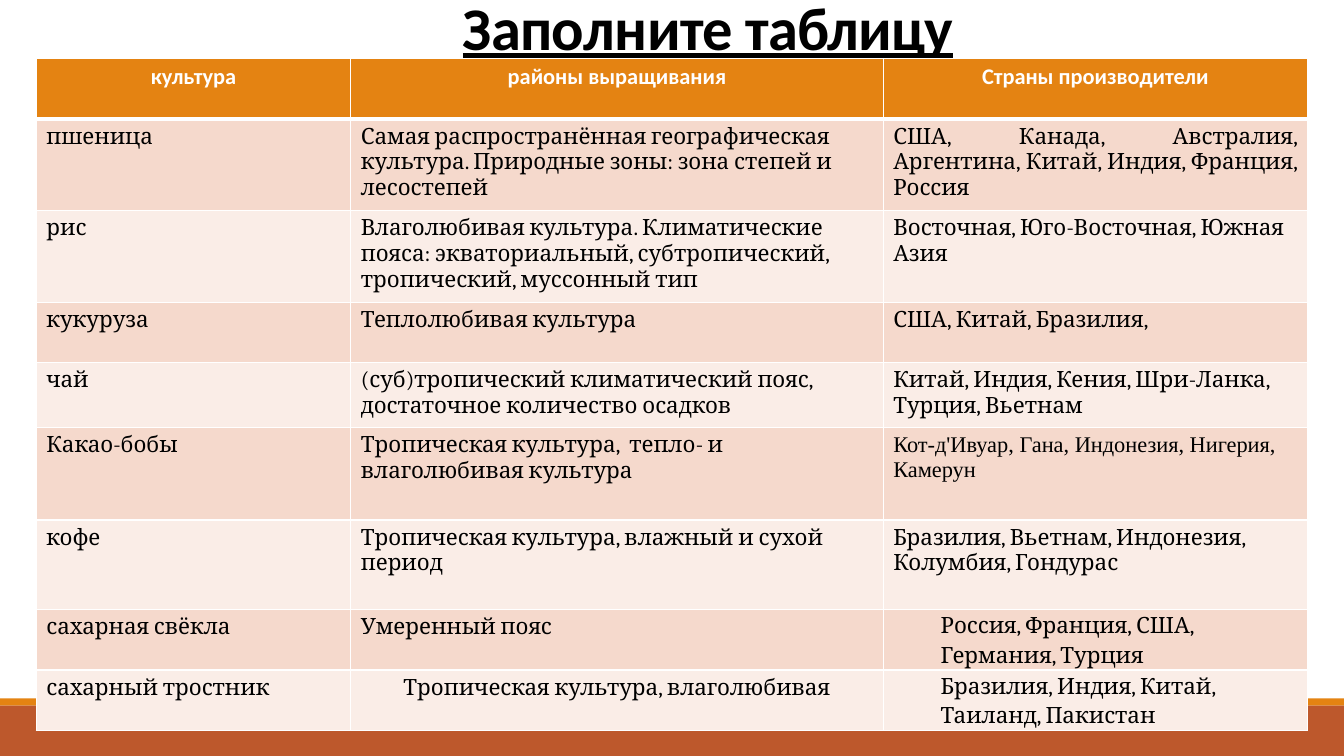
from lxml.etree import SubElement
from pptx import Presentation
from pptx.dml.color import RGBColor
from pptx.enum.shapes import MSO_SHAPE
from pptx.enum.text import MSO_ANCHOR, MSO_AUTO_SIZE, PP_ALIGN
from pptx.oxml.ns import qn
from pptx.util import Inches, Pt

WHITE = RGBColor(0xFF, 0xFF, 0xFF)
BLACK = RGBColor(0, 0, 0)
ORANGE = RGBColor(0xE4, 0x83, 0x12)
RUST = RGBColor(0xBD, 0x58, 0x2C)
PEACH = RGBColor(0xF5, 0xD9, 0xCC)
PALE = RGBColor(0xFA, 0xED, 0xE7)

SLIDE_WIDTH, SLIDE_HEIGHT = Inches(13.33), Inches(7.5)
COLUMN_WIDTHS = [3.12, 5.28, 4.21]
ROW_HEIGHTS = [0.6, 0.91, 0.91, 0.6, 0.64, 0.92, 0.89, 0.6, 0.6]
HEADINGS = ["культура", "районы выращивания", "Страны производители"]
CROPS = [
    ["пшеница",
     "Самая распространённая географическая культура. Природные зоны: зона степей и лесостепей",
     "США, Канада, Австралия, Аргентина, Китай, Индия, Франция, Россия"],
    ["рис",
     "Влаголюбивая культура. Климатические пояса: экваториальный, субтропический, "
     "тропический, муссонный тип",
     "Восточная, Юго-Восточная, Южная Азия"],
    ["кукуруза", "Теплолюбивая культура", "США, Китай, Бразилия,"],
    ["чай",
     "(суб)тропический климатический пояс, достаточное количество осадков",
     "Китай, Индия, Кения, Шри-Ланка, Турция, Вьетнам"],
    ["Какао-бобы",
     "Тропическая культура,  тепло- и влаголюбивая культура",
     "Кот-д'Ивуар, Гана, Индонезия, Нигерия, Камерун"],
    ["кофе",
     "Тропическая культура, влажный и сухой период",
     "Бразилия, Вьетнам, Индонезия, Колумбия, Гондурас"],
    ["сахарная свёкла", "Умеренный пояс", "Россия, Франция, США, Германия, Турция"],
    ["сахарный тростник",
     "Тропическая культура, влаголюбивая",
     "Бразилия, Индия, Китай, Таиланд, Пакистан"],
]


def add_footer(slide, left, top, width, height):
    """Draw the rust footer band with its orange strip on top."""
    strip_height = Inches(0.07)
    for band_top, band_height, color in [
        (top, strip_height, ORANGE),
        (top + strip_height, height - strip_height, RUST),
    ]:
        band = slide.shapes.add_shape(MSO_SHAPE.RECTANGLE, left, band_top, width, band_height)
        band.shadow.inherit = False
        band.fill.solid()
        band.fill.fore_color.rgb = color
        band.line.fill.background()


def place_title(slide, left, top, width, height):
    """Move the title placeholder into its box and format it."""
    title = slide.shapes.title
    title.left, title.top, title.width, title.height = left, top, width, height
    frame = title.text_frame
    frame.text = "Заполните таблицу"
    frame.auto_size = MSO_AUTO_SIZE.NONE
    frame.vertical_anchor = MSO_ANCHOR.BOTTOM
    heading = frame.paragraphs[0]
    heading.alignment = PP_ALIGN.CENTER
    heading.line_spacing = 0.85
    font = heading.font
    font.name, font.size, font.bold, font.underline = "Calibri", Pt(43.2), True, True
    font.color.rgb = BLACK
    heading.runs[0].font._element.set("spc", "-50")


def set_borders(cell, bottom_points):
    """Give a cell white borders, with its own bottom width."""
    properties = cell._tc.get_or_add_tcPr()
    for side, points in [("L", 1), ("R", 1), ("T", 1), ("B", bottom_points)]:
        border = SubElement(properties, qn(f"a:ln{side}"), w=str(Pt(points)))
        fill = SubElement(border, qn("a:solidFill"))
        SubElement(fill, qn("a:srgbClr"), val=str(WHITE))


def fill_cell(cell, text, background, color, face, bold):
    """Write one cell and return its paragraph."""
    set_borders(cell, 3 if bold else 1)
    cell.fill.solid()
    cell.fill.fore_color.rgb = background
    cell.text = text
    paragraph = cell.text_frame.paragraphs[0]
    font = paragraph.font
    font.name, font.size, font.bold = face, Pt(16), bold
    font.color.rgb = color
    return paragraph


def indent_countries(cell):
    """Indent the country list of a sugar crop."""
    cell.margin_left = cell.margin_right = Inches(0.07)
    cell.margin_top = cell.margin_bottom = 0
    countries = cell.text_frame.paragraphs[0]
    countries.line_spacing = 1.15
    countries.space_after = Pt(10)
    countries._p.get_or_add_pPr().set("marL", str(Inches(0.5)))
    countries._p.get_or_add_pPr().set("indent", "0")


def add_crop_table(slide, left, top, width, height):
    """Build the table of crops, growing regions and producers."""
    table = slide.shapes.add_table(
        len(ROW_HEIGHTS), len(COLUMN_WIDTHS), left, top, width, height).table
    for column, share in zip(table.columns, COLUMN_WIDTHS):
        column.width = int(width * share / sum(COLUMN_WIDTHS))
    for row, share in zip(table.rows, ROW_HEIGHTS):
        row.height = int(height * share / sum(ROW_HEIGHTS))
    for cell, heading in zip(table.rows[0].cells, HEADINGS):
        fill_cell(cell, heading, ORANGE, WHITE, "Calibri", True).alignment = PP_ALIGN.CENTER
    for number, crop in enumerate(CROPS, start=1):
        background = PEACH if number % 2 else PALE
        for cell, text in zip(table.rows[number].cells, crop):
            face = "Times New Roman" if text.startswith("Кот-д'Ивуар") else "Cambria"
            fill_cell(cell, text, background, BLACK, face, False)
    table.cell(1, 2).text_frame.paragraphs[0].alignment = PP_ALIGN.JUSTIFY
    table.cell(len(CROPS), 1).text_frame.paragraphs[0].alignment = PP_ALIGN.CENTER
    for number in (len(CROPS) - 1, len(CROPS)):
        indent_countries(table.cell(number, 2))


def main():
    """Assemble the slide and save it."""
    presentation = Presentation()
    presentation.slide_width, presentation.slide_height = SLIDE_WIDTH, SLIDE_HEIGHT
    slide = presentation.slides.add_slide(presentation.slide_layouts[5])
    footer_top = Inches(6.93)
    add_footer(slide, 0, footer_top, SLIDE_WIDTH, SLIDE_HEIGHT - footer_top)
    place_title(slide, Inches(1.52), 0, Inches(11), Inches(0.67))
    add_crop_table(slide, Inches(0.36), Inches(0.58),
                   Inches(sum(COLUMN_WIDTHS)), Inches(sum(ROW_HEIGHTS)))
    presentation.save("out.pptx")


if __name__ == "__main__":
    main()
